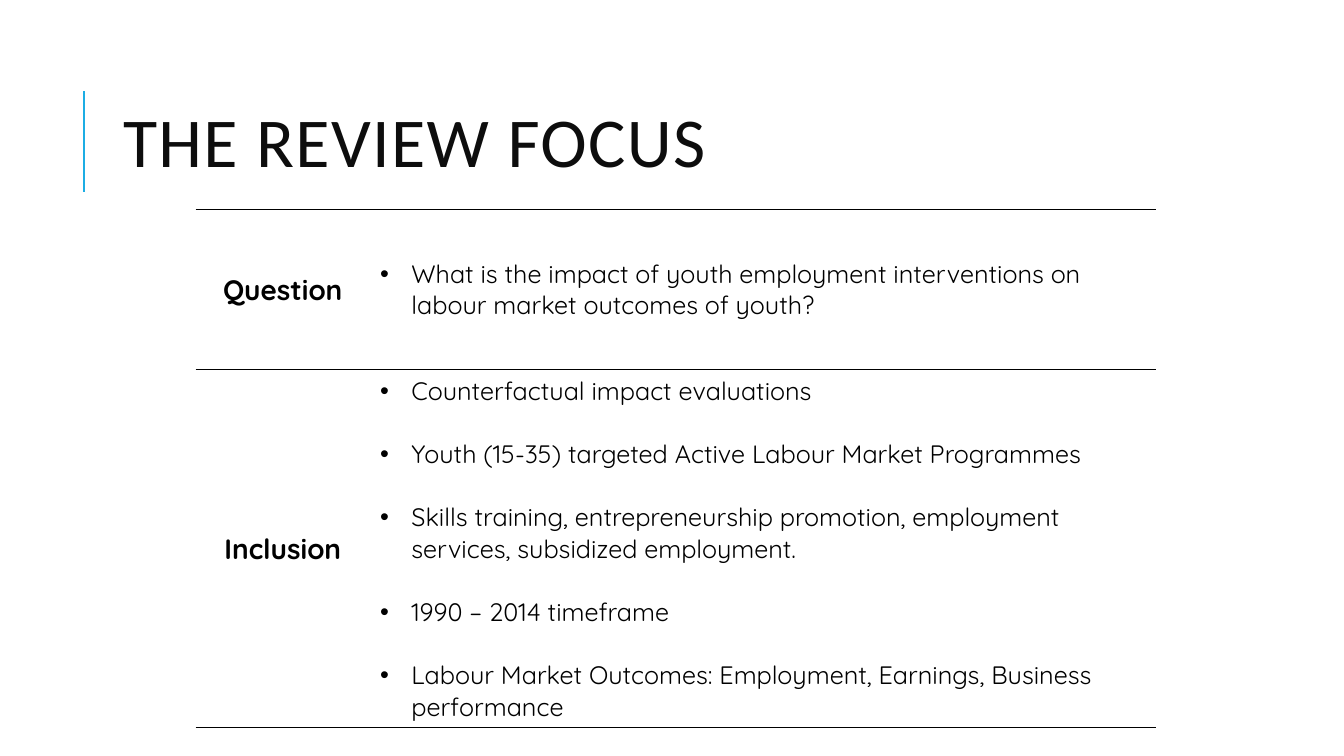
from lxml.etree import SubElement
from pptx import Presentation
from pptx.dml.color import RGBColor
from pptx.enum.shapes import MSO_CONNECTOR
from pptx.enum.text import MSO_ANCHOR, MSO_AUTO_SIZE, PP_ALIGN
from pptx.oxml import parse_xml
from pptx.oxml.ns import nsdecls, qn
from pptx.util import Inches, Pt

COLOURS = {"accent": "1CADE4", "title": "0D0D0D", "text": "000000"}

FOCUS = [
    ("Question", 1.59, [
        "What is the impact of youth employment interventions on labour market outcomes of youth?",
    ]),
    ("Inclusion", 3.55, [
        "Counterfactual impact evaluations",
        "Youth (15-35) targeted Active Labour Market Programmes",
        "Skills training, entrepreneurship promotion, employment services, subsidized employment.",
        "1990 – 2014 timeframe",
        "Labour Market Outcomes: Employment, Earnings, Business performance",
    ]),
]


def write_text(para, text, size, font="Quicksand", colour="text", bold=False,
               align=PP_ALIGN.LEFT, line_spacing=None, spacing=None, after=0):
    para.alignment = align
    para.line_spacing = line_spacing
    para.space_before = Pt(0)
    para.space_after = Pt(after)
    span = para.add_run()
    span.text = text
    span.font.size = Pt(size)
    span.font.name = font
    span.font.bold = bold
    span.font.color.rgb = RGBColor.from_string(COLOURS[colour])
    if spacing:
        span.font._element.set("spc", str(spacing * 100))


def add_bullet(para):
    properties = para._p.get_or_add_pPr()
    properties.set("marL", str(Inches(0.31)))
    properties.set("indent", str(Inches(-0.31)))
    SubElement(properties, qn("a:buFont"), typeface="Arial")
    SubElement(properties, qn("a:buChar"), char="•")


def set_borders(cell, sides):
    properties = cell._tc.get_or_add_tcPr()
    for position, side in enumerate("LRTB"):
        if side in sides:
            paint = f'<a:solidFill><a:srgbClr val="{COLOURS["text"]}"/></a:solidFill>'
        else:
            paint = "<a:noFill/>"
        border = parse_xml(f'<a:ln{side} {nsdecls("a")} w="{Pt(1)}">{paint}</a:ln{side}>')
        properties.insert(position, border)


def add_title(page, text):
    title = page.shapes.title
    title.left, title.top = Inches(1.12), Inches(0.64)
    title.width, title.height = Inches(10.63), Inches(1.64)
    frame = title.text_frame
    frame.auto_size = MSO_AUTO_SIZE.NONE
    frame.vertical_anchor = MSO_ANCHOR.MIDDLE
    write_text(frame.paragraphs[0], text, 50, font="Calibri", colour="title",
               line_spacing=0.8, spacing=1)


def add_accent_line(page):
    line = page.shapes.add_connector(MSO_CONNECTOR.STRAIGHT, Inches(0.83), Inches(1.9),
                                     Inches(0.83), Inches(0.9))
    line.line.color.rgb = RGBColor.from_string(COLOURS["accent"])
    line.line.width = Pt(1.5)
    SubElement(line._element.spPr, qn("a:effectLst"))


def add_focus_table(page):
    height = sum(row_height for _, row_height, _ in FOCUS)
    table = page.shapes.add_table(len(FOCUS), 2, Inches(1.94), Inches(2.08),
                                  Inches(9.53), Inches(height)).table
    table.first_row = False
    table.horz_banding = False
    table.columns[0].width = Inches(1.73)
    table.columns[1].width = Inches(7.8)
    for index, (label, row_height, points) in enumerate(FOCUS):
        table.rows[index].height = Inches(row_height)
        label_cell, points_cell = table.rows[index].cells
        for cell in (label_cell, points_cell):
            cell.fill.background()
            cell.vertical_anchor = MSO_ANCHOR.MIDDLE
            set_borders(cell, "TB")
        write_text(label_cell.text_frame.paragraphs[0], label, 20, bold=True,
                   align=PP_ALIGN.CENTER)
        frame = points_cell.text_frame
        for number, point in enumerate(points):
            para = frame.add_paragraph() if number else frame.paragraphs[0]
            is_last = number == len(points) - 1
            write_text(para, point, 18, after=0 if is_last else 22.5)
            add_bullet(para)


def main():
    deck = Presentation()
    deck.slide_width, deck.slide_height = Inches(13.33), Inches(7.5)
    page = deck.slides.add_slide(deck.slide_layouts[5])
    add_accent_line(page)
    add_focus_table(page)
    add_title(page, "THE REVIEW FOCUS")
    deck.save("out.pptx")


if __name__ == "__main__":
    main()
